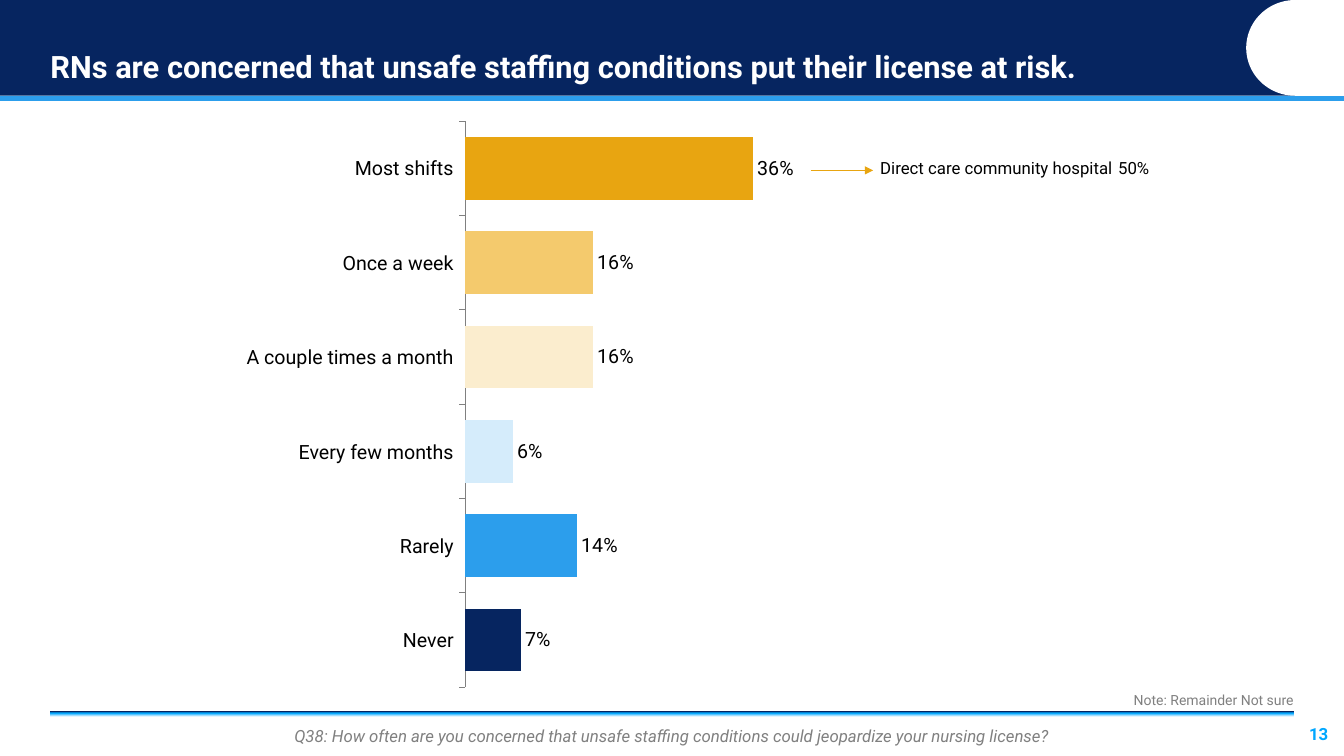
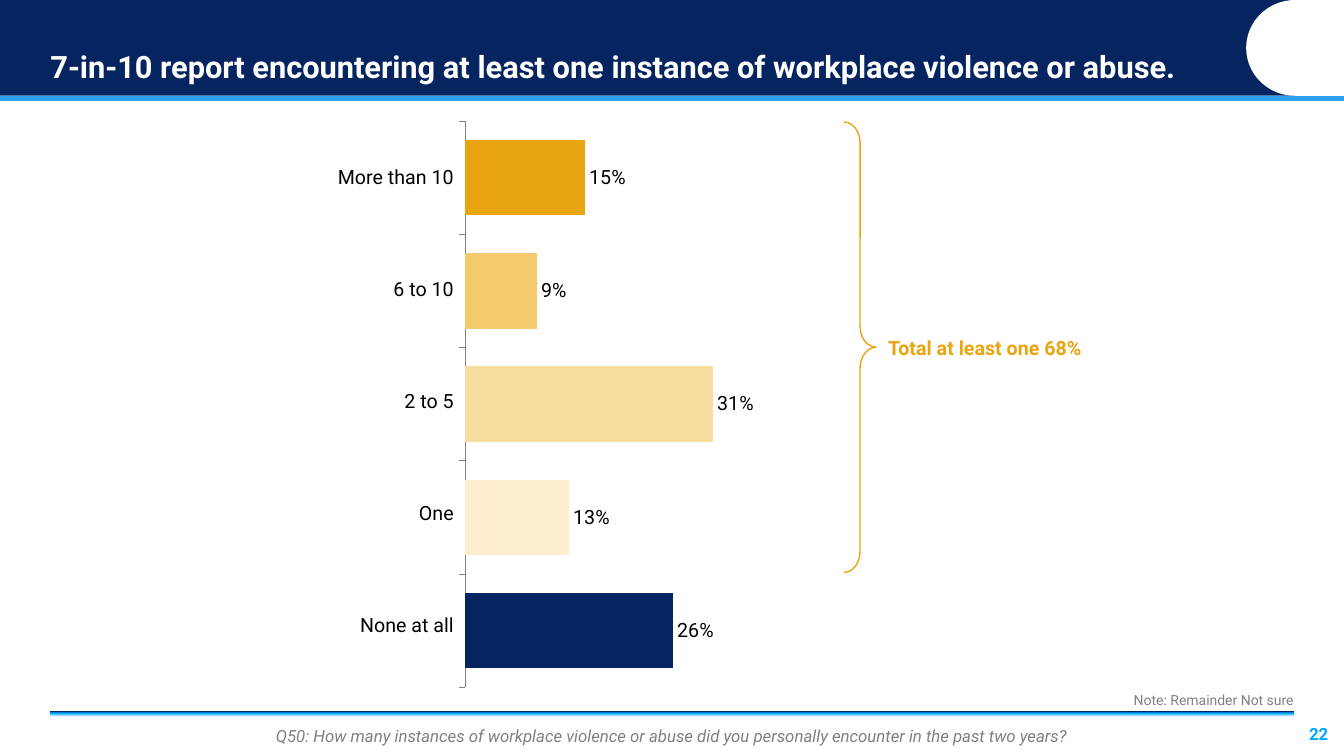
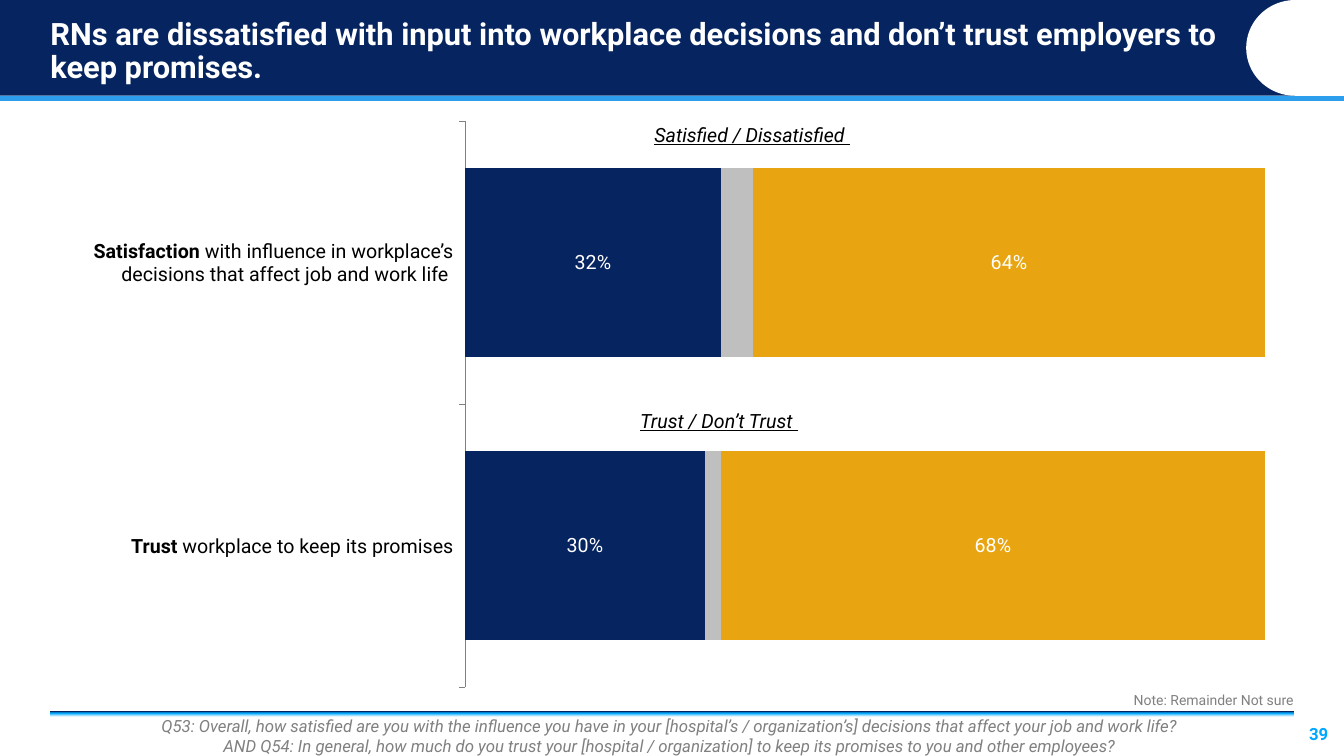
from lxml.etree import SubElement
from pptx import Presentation
from pptx.chart.data import CategoryChartData
from pptx.dml.color import RGBColor
from pptx.enum.chart import XL_CHART_TYPE as Kind
from pptx.enum.chart import XL_LABEL_POSITION as Spot
from pptx.enum.chart import XL_TICK_LABEL_POSITION as Tick
from pptx.enum.chart import XL_TICK_MARK as Mark
from pptx.enum.shapes import MSO_CONNECTOR as Link
from pptx.enum.shapes import MSO_SHAPE as Form
from pptx.enum.text import MSO_ANCHOR as Anchor
from pptx.enum.text import MSO_AUTO_SIZE as Fit
from pptx.enum.text import PP_ALIGN as Align
from pptx.oxml.ns import qn
from pptx.util import Inches, Pt


class Theme:
    font = "Roboto"
    navy = RGBColor.from_string("062560")
    blue = RGBColor.from_string("2C9EEC")
    pale = RGBColor.from_string("D5ECFB")
    sky = RGBColor.from_string("00A7FF")
    ice = RGBColor.from_string("CCEDFF")
    gold = RGBColor.from_string("E8A511")
    amber = RGBColor.from_string("F4CA6D")
    sand = RGBColor.from_string("F8DC9E")
    cream = RGBColor.from_string("FBEDCE")
    white = RGBColor.from_string("FFFFFF")
    black = RGBColor.from_string("000000")
    gray = RGBColor.from_string("808080")
    silver = RGBColor.from_string("BFBFBF")
    head, label, small, note = Pt(22), Pt(14), Pt(12), Pt(10)
    fade = [(0, white), (86, white), (88, ice), (94, sky), (100, navy)]
    plain = "{2D5ABB26-0587-4C30-8999-92F81FD0307C}"


def write(holder, text, size, color, align=Align.LEFT, anchor=Anchor.MIDDLE,
          bold=False, italic=False):
    """Fill a shape or table cell; text before a | is set in bold."""
    frame = holder.text_frame
    pad = holder if hasattr(holder, "margin_left") else frame
    pad.margin_left = pad.margin_top = pad.margin_right = pad.margin_bottom = 0
    pad.vertical_anchor = anchor
    frame.word_wrap = True
    para = frame.paragraphs[0]
    parts = text.split("|")
    para.text = parts[0]
    for rest in parts[1:]:
        para.add_run().text = rest
    para.alignment = align
    for i, run in enumerate(para.runs):
        font = run.font
        font.name, font.size, font.color.rgb = Theme.font, size, color
        font.bold = bold or (len(parts) > 1 and i == 0)
        font.italic = italic
    return para


def grid(slide, box, widths, rows, size, align, anchor):
    """Add a table without borders or fills."""
    table = slide.shapes.add_table(len(rows), len(widths), *map(Inches, box)).table
    table.first_row = table.horz_banding = False
    table._tbl.tblPr.find(qn("a:tableStyleId")).text = Theme.plain
    for col, width in zip(table.columns, widths):
        col.width = Inches(width)
    for row, texts in zip(table.rows, rows):
        for cell, text in zip(row.cells, texts):
            cell.fill.background()
            write(cell, text, size, Theme.black, align, anchor)


pages = [
    dict(
        num="13",
        title="RNs are concerned that unsafe staffing conditions put their license at risk.",
        ask="Q38: How often are you concerned that unsafe staffing conditions could jeopardize your nursing license?",
        deep=5.62,
        rows=["Most shifts", "Once a week", "A couple times a month",
              "Every few months", "Rarely", "Never"],
        data=[[0.36, 0.16, 0.16, 0.06, 0.14, 0.07]],
        tints=[Theme.gold, Theme.amber, Theme.cream, Theme.pale, Theme.blue, Theme.navy],
    ),
    dict(
        num="22",
        title="7-in-10 report encountering at least one instance of workplace violence or abuse.",
        ask="Q50: How many instances of workplace violence or abuse did you personally encounter in the past two years?",
        deep=5.55,
        rows=["More than 10", "6 to 10", "2 to 5", "One", "None at all"],
        data=[[0.15, 0.09, 0.31, 0.13, 0.26]],
        tints=[Theme.gold, Theme.amber, Theme.sand, Theme.cream, Theme.navy],
    ),
    dict(
        num="39",
        title="RNs are dissatisfied with input into workplace decisions and don’t trust employers to keep promises.",
        ask="Q53: Overall, how satisfied are you with the influence you have in your [hospital’s / organization’s] decisions that affect your job and work life? \v"
            "AND Q54: In general, how much do you trust your [hospital / organization] to keep its promises to you and other employees? ",
        deep=5.62,
        rows=["Satisfaction| with influence in workplace’s decisions that affect job and work life ",
              "Trust| workplace to keep its promises"],
        data=[[0.32, 0.3], [0.04, 0.02], [0.64, 0.68]],
        tints=[Theme.navy, Theme.silver, Theme.gold],
    ),
]

prs = Presentation()
prs.slide_width, prs.slide_height = Inches(13.33), Inches(7.5)

# Shared layout: placeholder places and the header bands
layout = prs.slide_layouts[1]
title, body, *spare = layout.placeholders
for holder in spare:
    holder._element.getparent().remove(holder._element)
for holder, box in [(title, (0.5, 0.1, 11.75, 0.75)), (body, (0.5, 7.05, 12.33, 0.45))]:
    holder.left, holder.top, holder.width, holder.height = map(Inches, box)

slides = [prs.slides.add_slide(layout) for page in pages]
bands = [
    (Form.RECTANGLE, (0, 0, 13.33, 0.95), Theme.navy),
    (Form.RECTANGLE, (0, 0.95, 13.33, 0.05), Theme.blue),
    (Form.FLOWCHART_DELAY, (12.36, 0, 0.97, 0.95), Theme.white),
]
for i, (form, box, color) in enumerate(bands):
    band = slides[0].shapes.add_shape(form, *map(Inches, box))
    band.shadow.inherit = False
    band.fill.solid()
    band.fill.fore_color.rgb = color
    band.line.fill.background()
    if form == Form.FLOWCHART_DELAY:
        band.rotation = 180
    band._element.nvSpPr.cNvPr.set("id", str(20 + i))
    layout.shapes._spTree.append(band._element)

for slide, page in zip(slides, pages):
    title, body = slide.placeholders
    para = write(title, page["title"], Theme.head, Theme.white,
                 anchor=Anchor.BOTTOM, bold=True)
    para.line_spacing = 0.9
    title.text_frame.auto_size = Fit.NONE

    para = write(body, page["ask"], Theme.small, Theme.gray, Align.CENTER, italic=True)
    props = para._p.get_or_add_pPr()
    props.set("marL", "0")
    props.set("indent", "0")
    SubElement(props, qn("a:buNone"))
    para.space_before = Pt(0)
    body.text_frame.margin_top = Inches(0.05)
    body.text_frame.auto_size = Fit.NONE
    body.fill.gradient()
    body.fill.gradient_angle = 90
    stops = body._element.spPr.find(qn("a:gradFill")).find(qn("a:gsLst"))
    for stop in list(stops):
        stops.remove(stop)
    for place, color in Theme.fade:
        stop = SubElement(stops, qn("a:gs"), pos=str(place * 1000))
        SubElement(stop, qn("a:srgbClr"), val=str(color))

    box = slide.shapes.add_textbox(*map(Inches, (12.83, 7.05, 0.5, 0.45)))
    write(box, page["num"], Theme.small, Theme.sky, Align.CENTER, bold=True)
    box = slide.shapes.add_textbox(*map(Inches, (0.5, 6.84, 12.33, 0.21)))
    write(box, "Note: Remainder Not sure", Theme.note, Theme.gray, Align.RIGHT)

    grid(slide, (0.5, 1.21, 4, page["deep"]), [4], [[text] for text in page["rows"]],
         Theme.label, Align.RIGHT, Anchor.MIDDLE)

    stacked = len(page["data"]) > 1
    data = CategoryChartData(number_format="0%")
    data.categories = [str(i + 1) for i in range(len(page["rows"]))]
    for i, vals in enumerate(page["data"], 1):
        data.add_series(f"Series {i}", vals)
    kind = Kind.BAR_STACKED_100 if stacked else Kind.BAR_CLUSTERED
    chart = slide.shapes.add_chart(
        kind, *map(Inches, (4.55, 1.07, 8.28, 5.76)), data).chart
    chart.has_legend = chart.has_title = False
    chart.font.name, chart.font.size = Theme.font, Theme.label
    chart.font.color.rgb = Theme.black

    axis = chart.category_axis
    axis.reverse_order = True
    axis.has_major_gridlines = False
    axis.tick_label_position = Tick.NONE
    axis.major_tick_mark = Mark.OUTSIDE
    axis.format.line.color.rgb = Theme.gray
    axis.format.line.width = Pt(0.5)
    axis = chart.value_axis
    axis.visible = axis.has_major_gridlines = False
    axis.minimum_scale, axis.maximum_scale = 0, 1

    plot = chart.plots[0]
    plot.gap_width = 50
    plot.overlap = 100 if stacked else 0
    plot.vary_by_categories = False
    for i, series in enumerate(plot.series):
        fill = series.format.fill
        fill.solid()
        fill.fore_color.rgb = page["tints"][i] if stacked else Theme.navy
        if stacked and i == 1:
            continue
        marks = series.data_labels
        marks.show_value = True
        marks.number_format, marks.number_format_is_linked = "0%", False
        marks.position = Spot.CENTER if stacked else Spot.OUTSIDE_END
        marks.font.name, marks.font.size = Theme.font, Theme.label
        marks.font.color.rgb = Theme.white if stacked else Theme.black
    if not stacked:
        for i, color in enumerate(page["tints"]):
            fill = plot.series[0].points[i].format.fill
            fill.solid()
            fill.fore_color.rgb = color

    area = chart._chartSpace.chart.plotArea
    for old in area.findall(qn("c:layout")):
        area.remove(old)
    outer = SubElement(area, qn("c:layout"))
    area.insert(0, outer)
    inner = SubElement(outer, qn("c:manualLayout"))
    for tag, val in [("layoutTarget", "inner"), ("xMode", "edge"), ("yMode", "edge"),
                     ("x", "0.007"), ("y", "0.023"), ("w", "0.959"), ("h", "0.975")]:
        SubElement(inner, qn(f"c:{tag}"), val=val)

risk, abuse, trust = slides

# License risk: callout beside the top bar
arrow = risk.shapes.add_connector(
    Link.STRAIGHT, *map(Inches, (8.04, 1.69, 8.66, 1.69)))
arrow.line.color.rgb = Theme.gold
arrow.line.width = Pt(0.5)
SubElement(arrow.line._get_or_add_ln(), qn("a:tailEnd"), type="triangle")
SubElement(arrow._element.spPr, qn("a:effectLst"))
grid(risk, (8.73, 1.58, 2.91, 0.26), [2.36, 0.55],
     [["Direct care community hospital", "50%"]], Theme.small, Align.LEFT, Anchor.TOP)

# Workplace violence: brace over the four upper bars
brace = abuse.shapes.add_shape(Form.RIGHT_BRACE, *map(Inches, (8.37, 1.21, 0.32, 4.47)))
brace.shadow.inherit = False
brace.adjustments[0], brace.adjustments[1] = 0.65, 0.5
brace.fill.background()
brace.line.color.rgb = Theme.gold
brace.line.width = Pt(1)
box = abuse.shapes.add_textbox(*map(Inches, (8.81, 3.33, 2.77, 0.24)))
write(box, "Total at least one 68%", Theme.label, Theme.gold, anchor=Anchor.TOP, bold=True)

# Satisfaction and trust: a heading above each bar
for left, top, text in [(3.32, 1.22, "Satisfied / Dissatisfied "),
                        (2.99, 4.06, "Trust / Don’t Trust ")]:
    box = trust.shapes.add_textbox(*map(Inches, (left, top, 8.28, 0.24)))
    para = write(box, text, Theme.label, Theme.black, Align.CENTER, Anchor.TOP, italic=True)
    para.runs[0].font.underline = True

prs.save("out.pptx")
